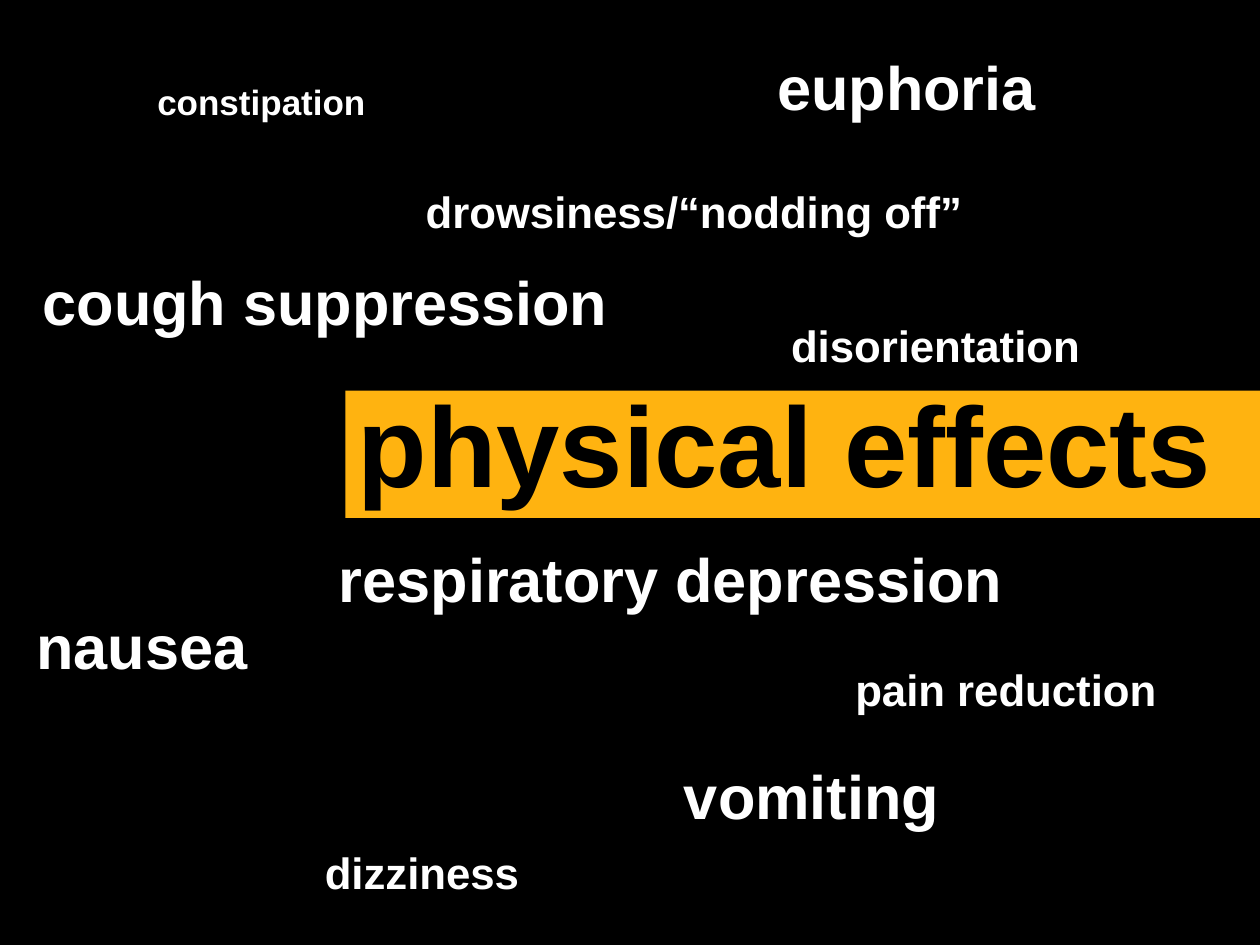
import pptx
import pptx.dml.color
import pptx.enum.shapes
import pptx.enum.text
import pptx.util

Inches = pptx.util.Inches

BLACK = "000000"
WHITE = "FFFFFF"
AMBER = "FFB310"

LINE_HEIGHTS = {35: 0.69, 25: 0.52, 20: 0.44}

EFFECTS = [
    ("drowsiness/“nodding off”", 25, 3.28, 1.42, 5.1),
    ("vomiting", 35, 5.33, 5.97, 4.19),
    ("nausea", 35, 0.19, 4.78, 6.02),
    ("constipation", 20, 1.15, 0.59, 5.13),
    ("respiratory depression", 35, 2.59, 4.25, 6.26),
    ("dizziness", 25, 2.48, 6.66, 2.93),
    ("pain reduction", 25, 6.69, 5.21, 5.1),
    ("cough suppression", 35, 0.24, 2.05, 6.31),
    ("euphoria", 35, 6.07, 0.34, 6.02),
    ("disorientation", 25, 6.18, 2.48, 5.1),
]


def rgb(hex_color):
    return pptx.dml.color.RGBColor.from_string(hex_color)


def paint(fill, hex_color):
    fill.solid()
    fill.fore_color.rgb = rgb(hex_color)


def write(shape, text, size, color):
    frame = shape.text_frame
    frame.word_wrap = True
    frame.vertical_anchor = pptx.enum.text.MSO_ANCHOR.TOP
    frame.auto_size = pptx.enum.text.MSO_AUTO_SIZE.SHAPE_TO_FIT_TEXT
    frame.text = text
    paragraph = frame.paragraphs[0]
    paragraph.alignment = pptx.enum.text.PP_ALIGN.LEFT
    paragraph.font.name = "Arial"
    paragraph.font.size = pptx.util.Pt(size)
    paragraph.font.bold = True
    paragraph.font.color.rgb = rgb(color)
    return paragraph


def add_backdrop(slide, left, top, width, height):
    paint(slide.background.fill, BLACK)
    backdrop = slide.shapes.add_shape(
        pptx.enum.shapes.MSO_SHAPE.RECTANGLE, left, top, width, height)
    backdrop.shadow.inherit = False
    paint(backdrop.fill, BLACK)
    backdrop.line.fill.background()
    slide.shapes.title.element.addprevious(backdrop.element)


def add_effect(slide, text, size, left, top, width):
    box = slide.shapes.add_textbox(left, top, width, Inches(LINE_HEIGHTS[size]))
    write(box, text, size, WHITE)


def place_title(slide, left, top, width, height):
    title = slide.shapes.title
    title.left, title.top, title.width, title.height = left, top, width, height
    paint(title.fill, AMBER)
    paragraph = write(title, "physical effects", 65, BLACK)
    paragraph.line_spacing = pptx.util.Pt(65)
    paragraph.space_before = pptx.util.Pt(0)


def main():
    deck = pptx.Presentation()
    deck.slide_width, deck.slide_height = Inches(10), Inches(7.5)
    slide = deck.slides.add_slide(deck.slide_layouts.get_by_name("Title Only"))
    add_backdrop(slide, 0, 0, deck.slide_width, deck.slide_height)
    place_title(slide, Inches(2.74), Inches(3.1), Inches(7.26), Inches(1.01))
    for text, size, left, top, width in EFFECTS:
        add_effect(slide, text, size, Inches(left), Inches(top), Inches(width))
    deck.save("out.pptx")


if __name__ == "__main__":
    main()
